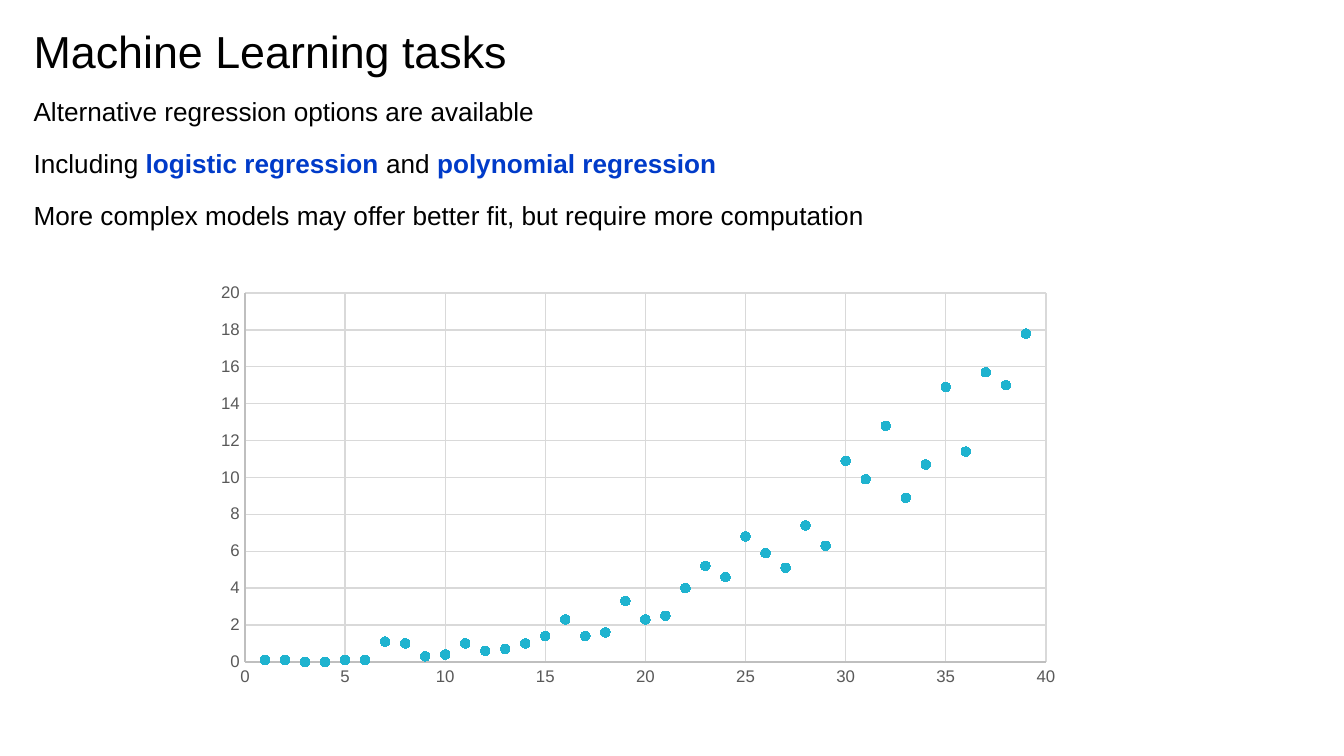
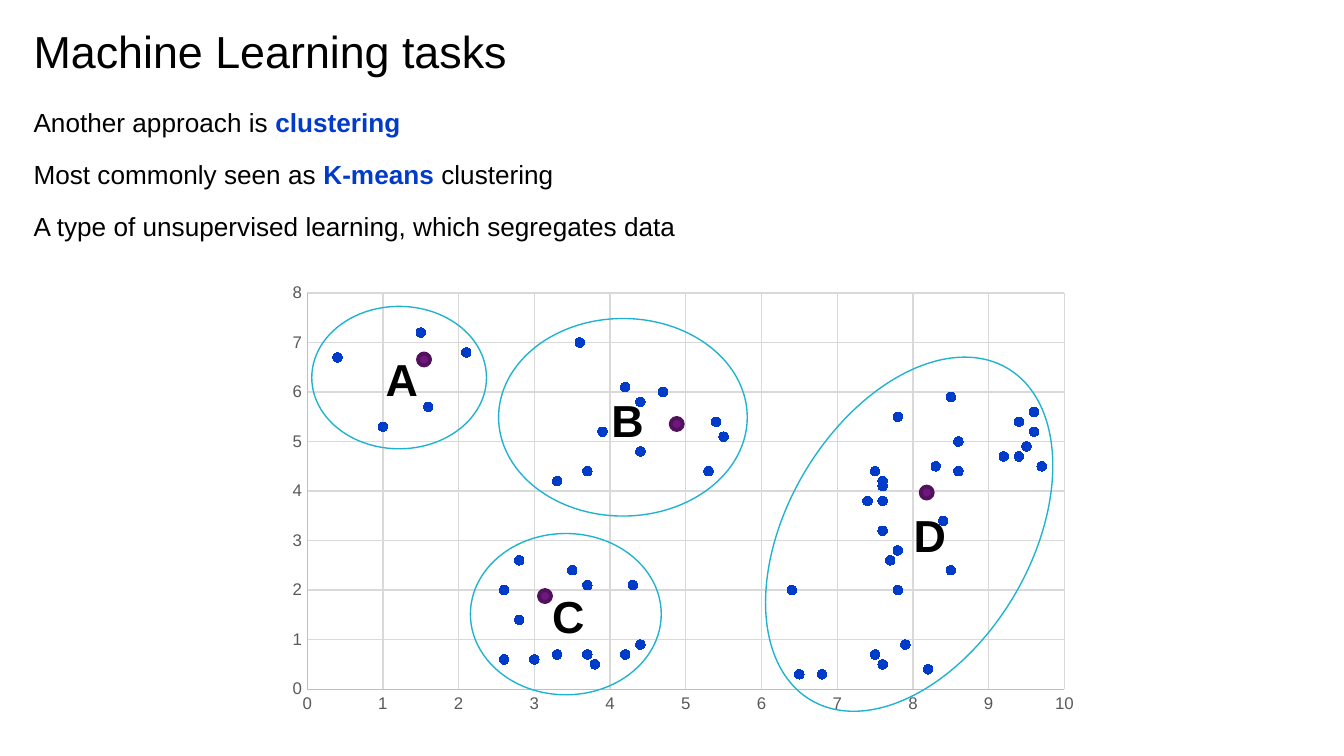
"""Build two slides on machine learning tasks: regression and clustering."""
from dataclasses import dataclass

from lxml import etree
from pptx import Presentation
from pptx.chart.data import XyChartData
from pptx.dml.color import RGBColor
from pptx.enum.chart import XL_CHART_TYPE, XL_MARKER_STYLE, XL_TICK_MARK
from pptx.enum.shapes import MSO_SHAPE
from pptx.enum.text import MSO_AUTO_SIZE
from pptx.oxml.ns import qn
from pptx.util import Pt

SCATTER = XL_CHART_TYPE.XY_SCATTER
CIRCLE = XL_MARKER_STYLE.CIRCLE
NO_TICK = XL_TICK_MARK.NONE
OVAL = MSO_SHAPE.OVAL
GROW = MSO_AUTO_SIZE.SHAPE_TO_FIT_TEXT


@dataclass(frozen=True)
class Theme:
    """Colours, font and type sizes."""
    font: str = "Arial"
    ink: str = "000000"
    key: str = "003BC9"
    cyan: str = "1FB3CF"
    plum: str = "6E177D"
    rim: str = "51115C"
    gray: str = "595959"
    axis: str = "BFBFBF"
    grid: str = "D9D9D9"
    head: int = 24
    body: int = 14
    tick: int = 9
    thin: float = 0.75


THEME = Theme()
TITLE = "Machine Learning tasks"
LEFT, FLOOR = 18, 369.36

TREND = [0.1, 0.1, 0, 0, 0.1, 0.1, 1.1, 1, 0.3, 0.4, 1, 0.6, 0.7, 1, 1.4, 2.3,
         1.4, 1.6, 3.3, 2.3, 2.5, 4, 5.2, 4.6, 6.8, 5.9, 5.1, 7.4, 6.3, 10.9,
         9.9, 12.8, 8.9, 10.7, 14.9, 11.4, 15.7, 15, 17.8]

GROUP_X = [4.4, 3.9, 4.2, 5.3, 4.7, 3.6, 5.5, 4.4, 3.3, 3.7, 5.4, 2.8, 4.2, 3,
           3.7, 3.5, 3.7, 3.8, 4.3, 3.3, 2.8, 4.4, 2.6, 2.6, 7.8, 8.5, 7.5,
           8.2, 6.4, 7.9, 7.8, 6.8, 6.5, 7.6, 7.7, 1, 1.5, 0.4, 2.1, 1.6, 9.4,
           8.4, 7.4, 8.3, 8.6, 7.6, 8.6, 9.2, 9.5, 7.6, 9.7, 9.4, 7.5, 7.6,
           7.8, 7.6, 8.5, 9.6, 9.6]
GROUP_Y = [4.8, 5.2, 6.1, 4.4, 6, 7, 5.1, 5.8, 4.2, 4.4, 5.4, 1.4, 0.7, 0.6,
           0.7, 2.4, 2.1, 0.5, 2.1, 0.7, 2.6, 0.9, 2, 0.6, 2.8, 2.4, 0.7, 0.4,
           2, 0.9, 2, 0.3, 0.3, 0.5, 2.6, 5.3, 7.2, 6.7, 6.8, 5.7, 5.4, 3.4,
           3.8, 4.5, 4.4, 4.1, 5, 4.7, 4.9, 4.2, 4.5, 4.7, 4.4, 3.8, 5.5, 3.2,
           5.9, 5.2, 5.6]

GROUPS = [
    ("A", (167.04, 164.16, 93.6, 76.32), 0, (199.44, 185.04), (223.92, 189.36)),
    ("B", (267.12, 170.64, 133.2, 105.84), 0, (320.4, 206.64), (359.28, 223.92)),
    ("C", (252, 285.84, 102.24, 86.4), 0, (288.72, 311.76), (288.72, 316.08)),
    ("D", (421.92, 182.88, 130.32, 206.64), 30.7, (482.4, 268.56), (493.2, 260.64)),
]


def rgb(code):
    """Turn a hex code into a colour."""
    return RGBColor.from_string(code)


def place(box):
    """Turn a box in points into lengths."""
    return [Pt(n) for n in box]


def write(para, text, size=THEME.body, color=THEME.ink, bold=False,
          before=0, lead=None):
    """Fill a paragraph; parts between asterisks stand out as key terms."""
    para.space_before = Pt(before)
    if lead:
        para.line_spacing = lead
    for i, part in enumerate(text.split("*")):
        if part:
            term = i % 2 == 1
            run = para.add_run()
            run.text = part
            run.font.name = THEME.font
            run.font.size = Pt(size)
            run.font.bold = bold or term
            run.font.color.rgb = rgb(THEME.key if term else color)


class Deck:
    """Holds the style and the current slide."""

    def __init__(self, theme):
        """Start an empty deck."""
        self.theme = theme
        self.prs = Presentation()
        self.prs.slide_width, self.prs.slide_height = Pt(720), Pt(405)
        self.slide = None

    def page(self, title, lines, top):
        """Add a slide with its title and body lines."""
        self.slide = self.prs.slides.add_slide(self.prs.slide_layouts[6])
        self.text((LEFT, 15.84, 324, FLOOR - 15.84), [title],
                  size=self.theme.head, lead=0.9)
        self.text((LEFT, top, 684, FLOOR - top), lines, before=11)

    def text(self, box, lines, inset=(0, 0), grow=False, **form):
        """Add a text box with one paragraph per line."""
        frame = self.slide.shapes.add_textbox(*place(box)).text_frame
        frame.word_wrap = True
        frame.margin_left = frame.margin_right = Pt(inset[0])
        frame.margin_top = frame.margin_bottom = Pt(inset[1])
        if grow:
            frame.auto_size = GROW
        for i, line in enumerate(lines):
            para = frame.add_paragraph() if i else frame.paragraphs[0]
            write(para, line, **form)

    def oval(self, box, line, width, fill=None, turn=0):
        """Add an ellipse, hollow unless a fill is given."""
        shape = self.slide.shapes.add_shape(OVAL, *place(box))
        shape.shadow.inherit = False
        shape.rotation = turn
        shape.line.color.rgb = rgb(line)
        shape.line.width = Pt(width)
        if fill:
            shape.fill.solid()
            shape.fill.fore_color.rgb = rgb(fill)
        else:
            shape.fill.background()

    def scatter(self, box, plot, xs, ys, color, x_axis, y_axis):
        """Add a scatter chart; each axis is given as (top value, step)."""
        data = XyChartData()
        series = data.add_series("Series 1")
        for x, y in zip(xs, ys):
            series.add_data_point(x, y)
        chart = self.slide.shapes.add_chart(SCATTER, *place(box), data).chart
        chart.has_title = chart.has_legend = False
        chart.font.name = self.theme.font
        chart.font.size = Pt(10)
        chart.font.color.rgb = rgb(self.theme.ink)
        chart.plots[0].vary_by_categories = False
        dots = chart.plots[0].series[0]
        dots.format.line.fill.background()
        dots.marker.style, dots.marker.size = CIRCLE, 5
        dots.marker.format.fill.solid()
        dots.marker.format.fill.fore_color.rgb = rgb(color)
        dots.marker.format.line.color.rgb = rgb(color)
        self.scale(chart.category_axis, *x_axis)
        self.scale(chart.value_axis, *y_axis)
        self.frame(chart, box, plot)

    def scale(self, axis, top, step):
        """Set the range and look of an axis."""
        axis.minimum_scale, axis.maximum_scale = 0, top
        axis.major_unit = step
        axis.major_tick_mark = axis.minor_tick_mark = NO_TICK
        axis.has_major_gridlines = True
        for item, color in ((axis, self.theme.axis),
                            (axis.major_gridlines, self.theme.grid)):
            item.format.line.color.rgb = rgb(color)
            item.format.line.width = Pt(self.theme.thin)
        labels = axis.tick_labels
        labels.number_format, labels.number_format_is_linked = "General", False
        labels.font.name = self.theme.font
        labels.font.size = Pt(self.theme.tick)
        labels.font.color.rgb = rgb(self.theme.gray)

    def frame(self, chart, box, plot):
        """Fix the inner plot area to a box on the slide."""
        area = chart.element.find(".//" + qn("c:plotArea"))
        for old in area.findall(qn("c:layout")):
            area.remove(old)
        layout = etree.Element(qn("c:layout"))
        area.insert(0, layout)
        manual = etree.SubElement(layout, qn("c:manualLayout"))
        left, top, wide, high = box
        parts = [("layoutTarget", "inner"), ("xMode", "edge"), ("yMode", "edge"),
                 ("x", (plot[0] - left) / wide), ("y", (plot[1] - top) / high),
                 ("w", plot[2] / wide), ("h", plot[3] / high)]
        for name, val in parts:
            etree.SubElement(manual, qn("c:" + name)).set("val", str(val))


def main():
    """Build and save both slides."""
    deck = Deck(THEME)
    deck.page(TITLE, ["Alternative regression options are available",
                      "Including *logistic regression *and *polynomial regression*",
                      "More complex models may offer better fit, "
                      "but require more computation"], 51.12)
    deck.scatter((109.44, 146.88, 465.84, 225.36), (131.25, 157, 429.1, 197.7),
                 range(1, len(TREND) + 1), TREND, THEME.cyan, (40, 5), (20, 2))

    deck.page(TITLE, ["Another approach is *clustering*",
                      "Most commonly seen as *K-means* clustering",
                      "A type of unsupervised learning, which segregates data"],
              56.88)
    deck.scatter((148.32, 146.88, 436.32, 240.48), (164.6, 157, 405.7, 212.3),
                 GROUP_X, GROUP_Y, THEME.key, (10, 1), (8, 1))
    for _, ring, turn, _, _ in GROUPS:
        deck.oval(ring, THEME.cyan, THEME.thin, turn=turn)
    for name, _, _, spot, _ in GROUPS:
        deck.text((*spot, 27.36, 36), [name], inset=(7.2, 3.6), grow=True,
                  size=THEME.head, bold=True)
    for *_, mean in reversed(GROUPS):
        deck.oval((*mean, 6.48, 6.48), THEME.rim, 2, fill=THEME.plum)
    deck.prs.save("out.pptx")


if __name__ == "__main__":
    main()
